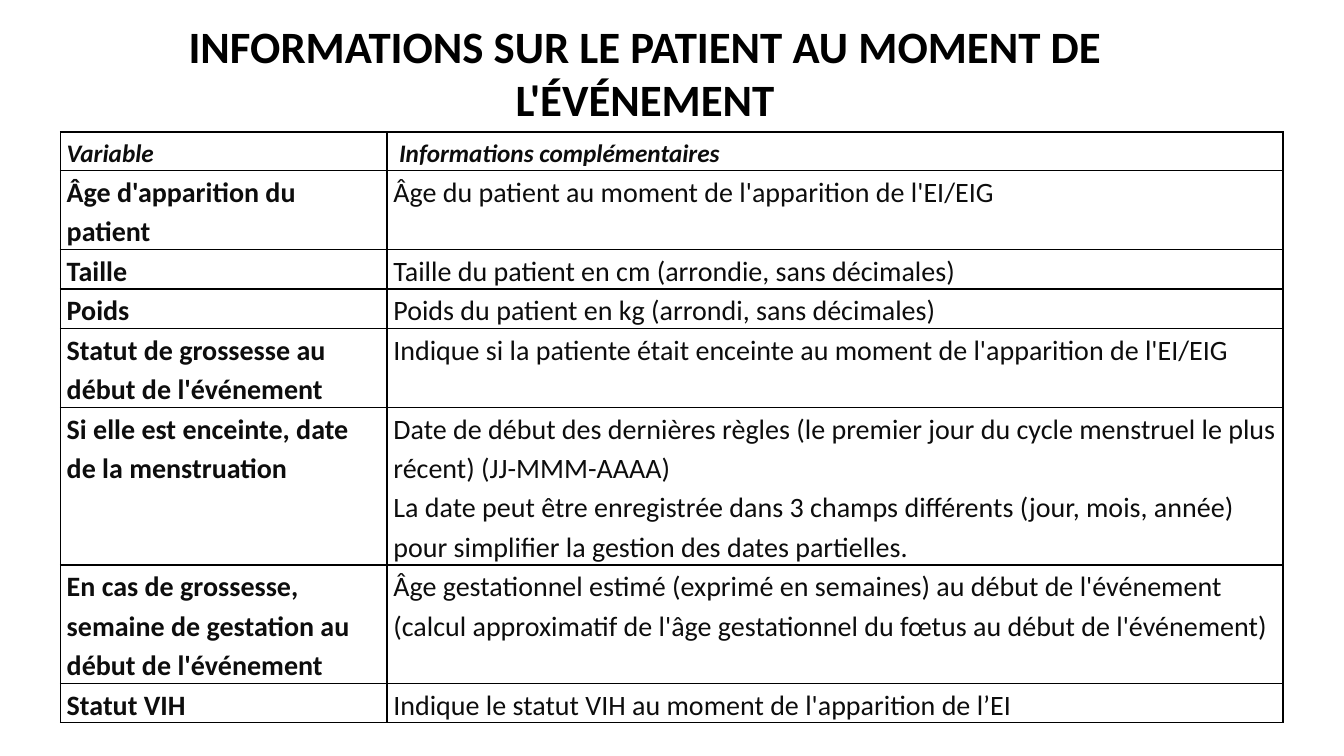
import pptx
import pptx.dml.color
import pptx.enum.text
import pptx.oxml
import pptx.util
from lxml import etree

Pt = pptx.util.Pt
ANCHOR = pptx.enum.text.MSO_ANCHOR
ALIGN = pptx.enum.text.PP_ALIGN


def color(value):
    return pptx.dml.color.RGBColor.from_string(value)


class Deck:
    font = "Calibri"
    black, ink, white = "000000", "0D0D0D", "FFFFFF"

    def __init__(self, width, height):
        self.prs = pptx.Presentation()
        self.prs.slide_width, self.prs.slide_height = Pt(width), Pt(height)

    def add_slide(self):
        self.s = self.prs.slides.add_slide(self.prs.slide_layouts[5])

    def format(self, p, size, ink, bold=False, italic=False):
        for r in p.runs:
            r.font.name, r.font.size = self.font, Pt(size)
            r.font.bold, r.font.italic = bold, italic
            r.font.color.rgb = color(ink)

    def title(self, text, x, y, w, h):
        sp = self.s.shapes.title
        sp.left, sp.top, sp.width, sp.height = Pt(x), Pt(y), Pt(w), Pt(h)
        tf = sp.text_frame
        tf.text = text
        tf.word_wrap = True
        tf.auto_size = pptx.enum.text.MSO_AUTO_SIZE.NONE
        tf.vertical_anchor = ANCHOR.TOP
        tf.paragraphs[0].alignment = ALIGN.CENTER
        self.format(tf.paragraphs[0], 32, self.black, bold=True)

    def borders(self, cell):
        tcPr = cell._tc.get_or_add_tcPr()
        for i, side in enumerate(("lnL", "lnR", "lnT", "lnB")):
            ln = etree.Element(pptx.oxml.ns.qn("a:" + side), w=str(Pt(1)))
            fill = etree.SubElement(ln, pptx.oxml.ns.qn("a:solidFill"))
            etree.SubElement(fill, pptx.oxml.ns.qn("a:srgbClr"), val=self.black)
            tcPr.insert(i, ln)

    def cell(self, cell, text, size, bold, italic, anchor):
        cell.margin_left = cell.margin_right = Pt(4.5)
        cell.margin_top = cell.margin_bottom = 0
        cell.vertical_anchor = anchor
        cell.fill.solid()
        cell.fill.fore_color.rgb = color(self.white)
        cell.text_frame.text = text
        for p in cell.text_frame.paragraphs:
            p.line_spacing = 1.15
            self.format(p, size, self.ink, bold, italic)
        self.borders(cell)

    def table(self, rows, x, y, widths, heights):
        tbl = self.s.shapes.add_table(len(rows), len(widths), Pt(x), Pt(y),
                                      Pt(sum(widths)), Pt(sum(heights))).table
        tbl.first_row = tbl.horz_banding = False
        for col, w in zip(tbl.columns, widths):
            col.width = Pt(w)
        for i, (row, h) in enumerate(zip(rows, heights)):
            tbl.rows[i].height = Pt(h)
            header = i == 0
            for j, text in enumerate(row):
                self.cell(tbl.cell(i, j), text, 18 if header else 20,
                          bold=header or j == 0, italic=header,
                          anchor=ANCHOR.MIDDLE if header else ANCHOR.TOP)


ROWS = [
    ("Variable", " Informations complémentaires"),
    ("Âge d'apparition du patient",
     "Âge du patient au moment de l'apparition de l'EI/EIG"),
    ("Taille", "Taille du patient en cm (arrondie, sans décimales)"),
    ("Poids", "Poids du patient en kg (arrondi, sans décimales)"),
    ("Statut de grossesse au début de l'événement",
     "Indique si la patiente était enceinte au moment de l'apparition de l'EI/EIG"),
    ("Si elle est enceinte, date de la menstruation",
     "Date de début des dernières règles (le premier jour du cycle menstruel "
     "le plus récent) (JJ-MMM-AAAA)\n"
     "La date peut être enregistrée dans 3 champs différents (jour, mois, année) "
     "pour simplifier la gestion des dates partielles."),
    ("En cas de grossesse, semaine de gestation au début de l'événement",
     "Âge gestationnel estimé (exprimé en semaines) au début de l'événement "
     "(calcul approximatif de l'âge gestationnel du fœtus au début de l'événement)"),
    ("Statut VIH", "Indique le statut VIH au moment de l'apparition de l’EI"),
]
# Row heights follow the number of text lines planned for each row
LINE = 27.6
LINES = [1, 1, 1, 1, 2, 4, 3, 1]


def main():
    deck = Deck(960, 540)
    deck.add_slide()
    # Heading
    deck.title("INFORMATIONS SUR LE PATIENT AU MOMENT DE L'ÉVÉNEMENT",
               117.4, 9.4, 687, 49.7)
    # Patient variables
    deck.table(ROWS, 43.2, 94.3, [233.3, 640], [LINE * n for n in LINES])
    deck.prs.save("out.pptx")


if __name__ == "__main__":
    main()
